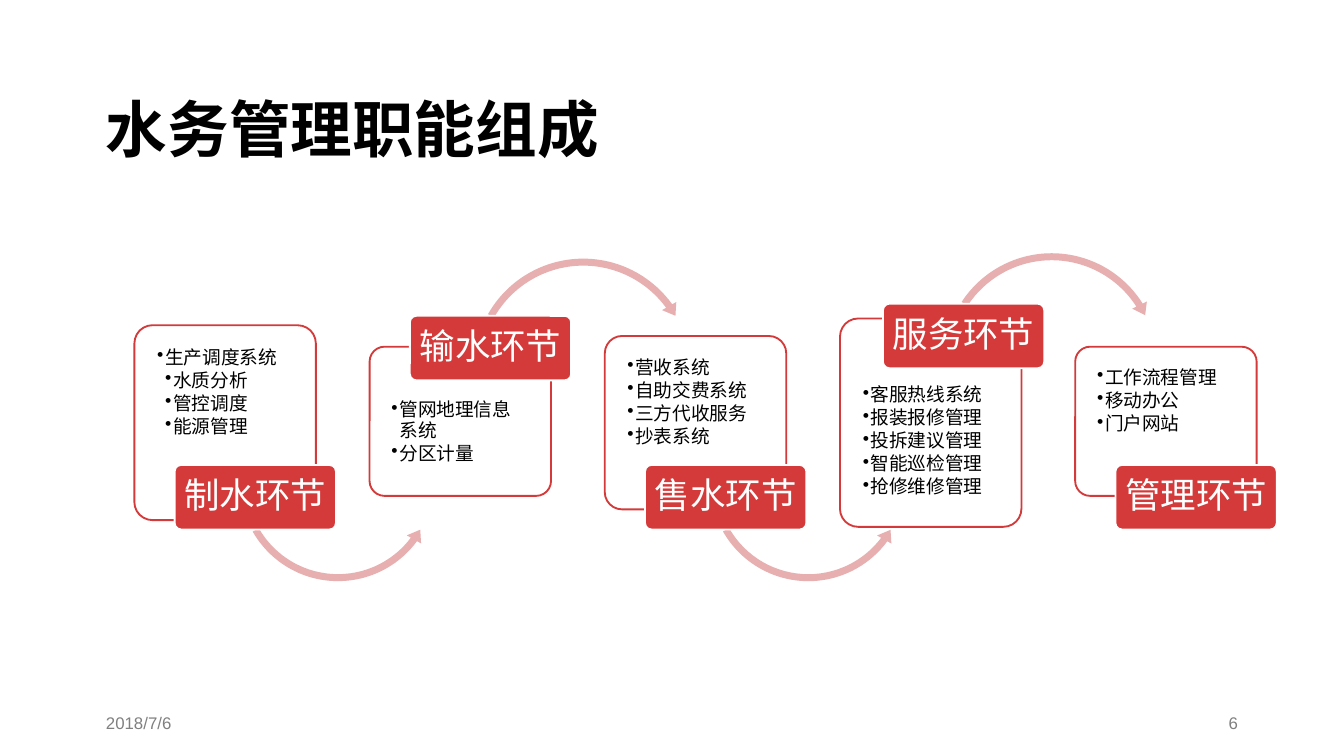
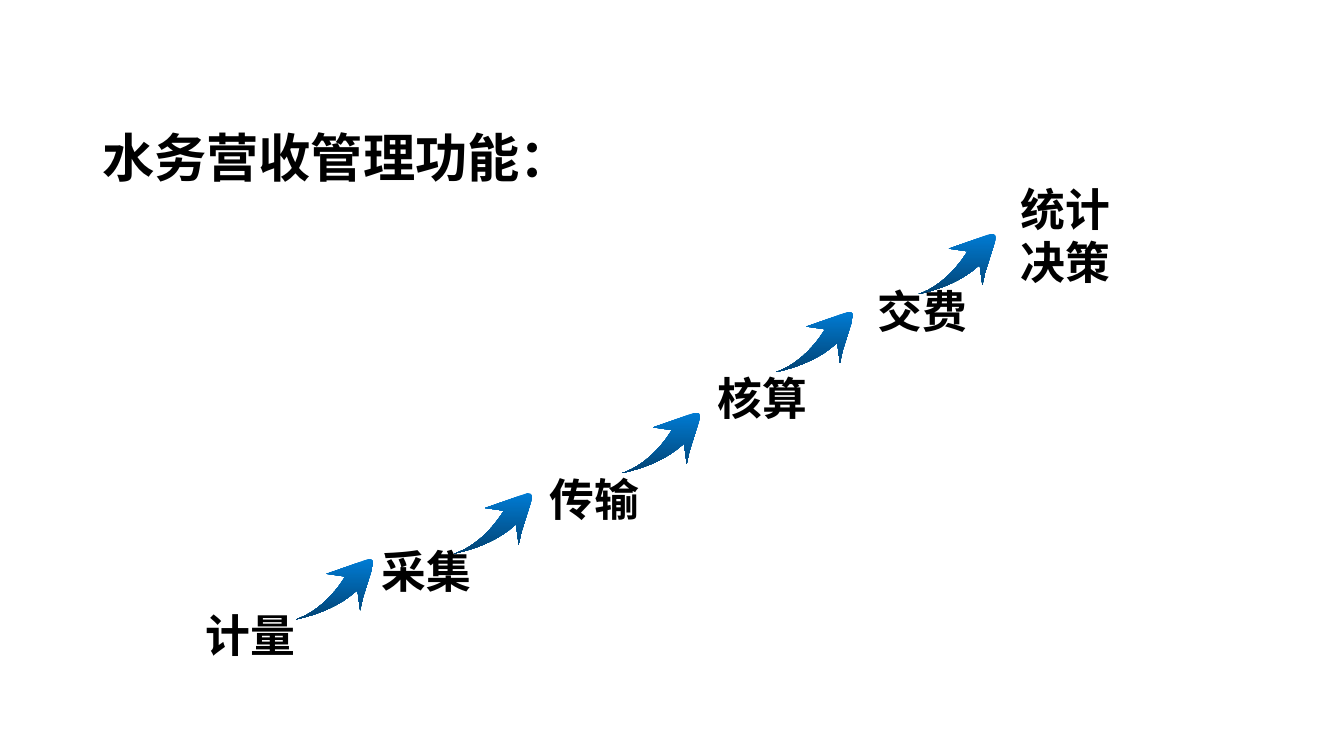
"""Build two slides on water management: the business stages and the revenue functions."""
import dataclasses

import lxml.etree
import pptx
import pptx.dml.color
import pptx.enum.shapes
import pptx.enum.text
import pptx.oxml.ns
import pptx.util


@dataclasses.dataclass(frozen=True)
class Theme:
    red: str = "D53A3A"
    pink: str = "E7AFAF"
    black: str = "000000"
    white: str = "FFFFFF"
    gray: str = "808080"
    light_blue: str = "007BD3"
    dark_blue: str = "034373"
    font: str = "Arial"
    step_font: str = "Calibri"
    title: int = 33
    subtitle: int = 28
    step: int = 24
    label: int = 19
    item: int = 10
    footer: int = 9


theme = Theme()
color = pptx.dml.color.RGBColor.from_string
qn = pptx.oxml.ns.qn
SHAPE = pptx.enum.shapes.MSO_SHAPE
ALIGN = pptx.enum.text.PP_ALIGN
ANCHOR = pptx.enum.text.MSO_ANCHOR


def px(*lengths):
    """Turn lengths of 100 px to the inch into EMU."""
    return [pptx.util.Emu(round(length * 9144)) for length in lengths]


def write(box, lines, size, ink=theme.black, font=theme.font, bold=False, align=ALIGN.LEFT,
          anchor=ANCHOR.MIDDLE, insets=(10, 5, 10, 5), spacing=1.2, wrap=True, levels=()):
    """Fill a box with one paragraph per line, bulleted where levels are given."""
    frame = box.text_frame
    frame.word_wrap = wrap
    frame.vertical_anchor = anchor
    frame.margin_left, frame.margin_top, frame.margin_right, frame.margin_bottom = px(*insets)
    for index, line in enumerate(lines):
        para = frame.add_paragraph() if index else frame.paragraphs[0]
        if levels:
            indent = px(6)[0]
            properties = para._p.get_or_add_pPr()
            properties.set("marL", str(indent * levels[index]))
            properties.set("indent", str(-indent))
            lxml.etree.SubElement(properties, qn("a:buChar")).set("char", "•")
            para.level = levels[index]
            para.space_after = pptx.util.Pt(1.5)
        para.alignment = align
        para.line_spacing = spacing
        span = para.add_run()
        span.text = line
        span.font.name = font
        span.font.size = pptx.util.Pt(size)
        span.font.bold = bold
        span.font.color.rgb = color(ink)


deck = pptx.Presentation()
deck.slide_width = px(1000)[0]
deck.slide_height = pptx.util.Emu(deck.slide_width * 9 // 16)

titles = [
    ("水务管理职能组成", theme.title, ANCHOR.MIDDLE, (10, 5, 10, 5)),
    ("水务营收管理功能：", theme.subtitle, ANCHOR.BOTTOM, (7, 4, 7, 4)),
]
pages = []
for title, size, anchor, insets in titles:
    page = deck.slides.add_slide(deck.slide_layouts[6])
    box = page.shapes.add_textbox(*px(69, 35, 862, 109))
    write(box, [title], size, bold=True, anchor=anchor, insets=insets)
    pages.append(page)
stage_page, revenue_page = pages

for left, text, align in [(69, "2018/7/6", ALIGN.LEFT), (706, "6", ALIGN.RIGHT)]:
    box = stage_page.shapes.add_textbox(*px(left, 521, 225, 30))
    write(box, [text], theme.footer, theme.gray, align=align)

below, above = SHAPE.LEFT_CIRCULAR_ARROW, SHAPE.CIRCULAR_ARROW
stages = [
    ("制水环节", ["生产调度系统", "水质分析", "管控调度", "能源管理"], (1, 2, 2, 2),
     242, 145, 13, (130, 346), (below, 175, 283, 153, 7, 36.55, 150.35)),
    ("输水环节", ["管网地理信息系统", "分区计量"], (1, 1),
     258, 111, 37, (305, 235), (above, 349, 189, 170, 6.25, 324.13, 209.57)),
    ("售水环节", ["营收系统", "自助交费系统", "三方代收服务", "抄表系统"], (1, 1, 1, 1),
     250, 129, 13, (480, 346), (below, 525, 283, 153, 7, 36.65, 150.45)),
    ("服务环节", ["客服热线系统", "报装报修管理", "投拆建议管理", "智能巡检管理", "抢修维修管理"],
     (1, 1, 1, 1, 1), 237, 155, 46, (657, 226),
     (above, 699, 185, 167, 6.36, 327.64, 213.18)),
    ("管理环节", ["工作流程管理", "移动办公", "门户网站"], (1, 1, 1),
     258, 111, 13, (830, 346), None),
]
band_width, head_width, degree = 5.2, 6.1, 0.6
for index, (name, items, levels, top, height, inset, corner, arc) in enumerate(stages):
    card = stage_page.shapes.add_shape(SHAPE.ROUNDED_RECTANGLE, *px(100 + 175 * index, top, 135, height))
    label = stage_page.shapes.add_shape(SHAPE.ROUNDED_RECTANGLE, *px(*corner, 120, 48))
    for shape, fill, line in [(card, theme.white, theme.red), (label, theme.red, theme.white)]:
        shape.shadow.inherit = False
        shape.adjustments[0] = 0.1
        shape.fill.solid()
        shape.fill.fore_color.rgb = color(fill)
        shape.line.color.rgb = color(line)
        shape.line.width = pptx.util.Pt(1)
    card_color = card._element.spPr.find(qn("a:solidFill"))[0]
    lxml.etree.SubElement(card_color, qn("a:alpha")).set("val", "90000")
    write(card, items, theme.item, anchor=ANCHOR.TOP, insets=(13, inset, 13, 0),
          spacing=0.9, levels=levels)
    write(label, [name], theme.label, theme.white, align=ALIGN.CENTER,
          insets=(4, 3, 4, 3), spacing=0.9)
    if arc:
        kind, left, top, size, head_angle, end_angle, start_angle = arc
        arrow = stage_page.shapes.add_shape(kind, *px(left, top, size, size))
        arrow.shadow.inherit = False
        arrow.fill.solid()
        arrow.fill.fore_color.rgb = color(theme.pink)
        arrow.line.fill.background()
        values = [band_width / size, head_angle * degree, end_angle * degree,
                  start_angle * degree, head_width / size]
        for position, value in enumerate(values):
            arrow.adjustments[position] = value
        label._element.addprevious(arrow._element)

curves = [
    [(54, 0), (57, 0), (59, 0), (57, 7)],
    [(45, 24), (27, 40), (3, 44), (0, 45)],
    [(0, 45), (15, 40), (27, 28), (35, 16)],
]
tip, lower_edge, upper_edge = [
    [tuple((1 - t) ** 3 * a + 3 * (1 - t) ** 2 * t * b + 3 * (1 - t) * t ** 2 * c + t ** 3 * d
           for a, b, c, d in zip(*curve))
     for t in [step / 12 for step in range(13)]]
    for curve in curves
]
outline = tip + [(50, 29), (48, 38), (46, 23)] + lower_edge + upper_edge[1:] + [(37, 13), (23, 11)]
points = [px(*point) for point in outline]

for left, top in [(220, 416), (338, 367), (463, 307), (577, 232), (683, 174)]:
    builder = revenue_page.shapes.build_freeform(*points[0])
    builder.add_line_segments(points[1:], close=True)
    arrow = builder.convert_to_shape(*px(left, top))
    arrow.shadow.inherit = False
    arrow.line.fill.background()
    arrow.fill.gradient()
    arrow.fill.gradient_angle = 270
    for stop, shade in zip(arrow.fill.gradient_stops, [theme.light_blue, theme.dark_blue]):
        stop.color.rgb = color(shade)

steps = [
    (["计量"], 143, 447, 87, 50),
    (["采集"], 274, 400, 87, 50),
    (["传输"], 396, 346, 93, 50),
    (["核算"], 524, 271, 87, 50),
    (["交费"], 643, 206, 87, 50),
    (["统计", "决策"], 749, 130, 87, 121),
]
for lines, *place in steps:
    box = revenue_page.shapes.add_textbox(*px(*place))
    write(box, lines, theme.step, font=theme.step_font, bold=True, align=ALIGN.CENTER,
          anchor=ANCHOR.TOP, spacing=1.0, wrap=False)

deck.save("out.pptx")
